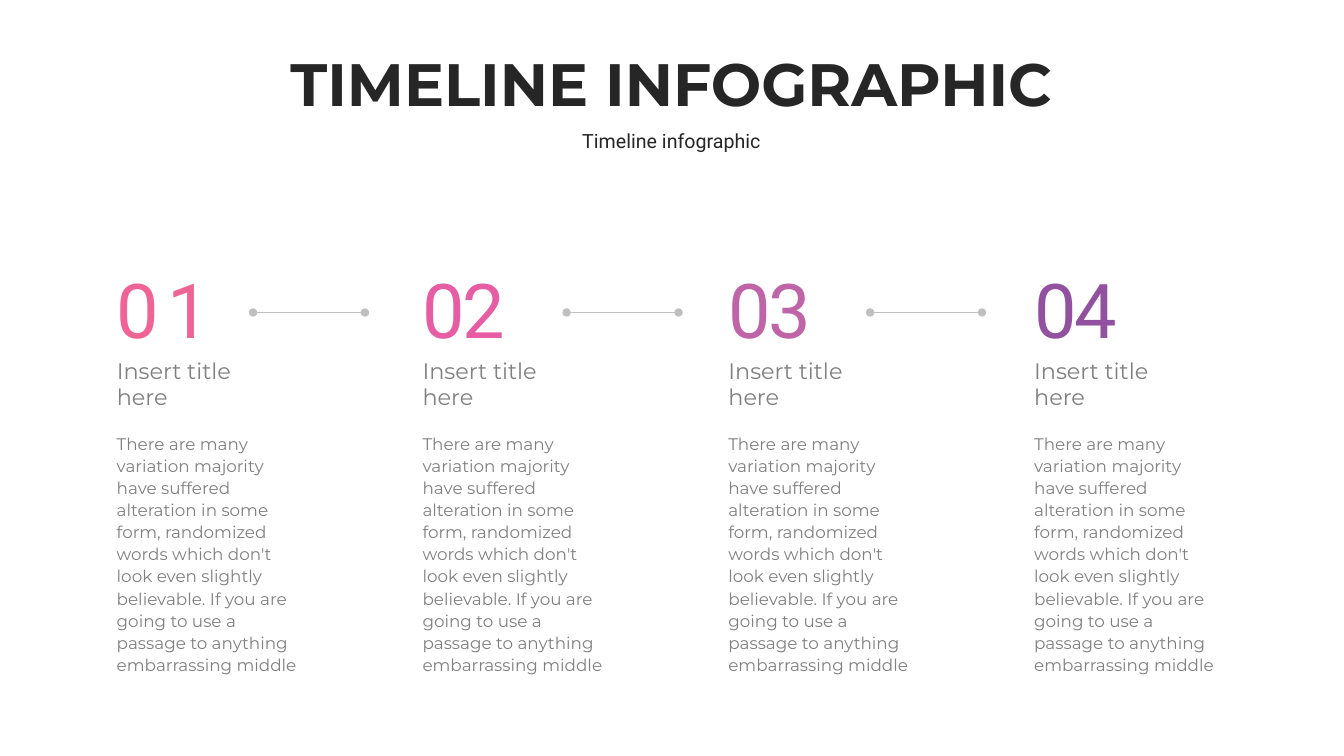
import pptx
import pptx.dml.color
import pptx.enum.shapes
import pptx.enum.text
import pptx.oxml.ns
import pptx.util
from lxml import etree

Inches = pptx.util.Inches
Pt = pptx.util.Pt
Align = pptx.enum.text.PP_ALIGN
AutoSize = pptx.enum.text.MSO_AUTO_SIZE

COLORS = {
    "heading": "262626",
    "text": "808080",
    "line": "BFBFBF",
    "01": "F06495",
    "02": "E65DA3",
    "03": "BF64A7",
    "04": "91519F",
}
BODY_TEXT = (
    "There are many variation majority have suffered alteration in some form, "
    "randomized words which don't look even slightly believable. If you are "
    "going to use a passage to anything embarrassing middle"
)
FIRST_LEFT = 1.06
COLUMN_STEP = 3.033
CONNECTOR_LEFTS = [2.51, 5.62, 8.63]
CONNECTOR_TOP = 3.1
CONNECTOR_LENGTH = 1.11


class TimelineSlide:
    """Holds the style and the slide, and draws each kind of element."""

    def __init__(self, presentation):
        self.slide = presentation.slides.add_slide(presentation.slide_layouts[2])
        self.heading_font = "Montserrat"
        self.number_font = "Roboto"

    def format_text(self, shape, text, font, size, color, bold=False,
                    align=Align.LEFT, line_spacing=1.0, space_before=0, tracking=0):
        shape.text_frame.text = text
        paragraph = shape.text_frame.paragraphs[0]
        paragraph.alignment = align
        paragraph.line_spacing = line_spacing
        paragraph.space_before = Pt(space_before)
        run = paragraph.runs[0]
        run.font.name = font
        run.font.size = Pt(size)
        run.font.bold = bold
        run.font.color.rgb = pptx.dml.color.RGBColor.from_string(COLORS[color])
        if tracking:
            run._r.get_or_add_rPr().set("spc", str(int(tracking * 100)))

    def placeholder(self, shape, text, top, height, font, size, **style):
        shape.left, shape.top = Inches(0.56), Inches(top)
        shape.width, shape.height = Inches(12.2), Inches(height)
        frame = shape.text_frame
        frame.auto_size = AutoSize.NONE
        frame.word_wrap = True
        frame.vertical_anchor = pptx.enum.text.MSO_ANCHOR.MIDDLE
        frame.margin_left = frame.margin_right = 0
        frame.margin_top = frame.margin_bottom = 0
        self.format_text(shape, text, font, size, "heading", align=Align.CENTER,
                         line_spacing=0.9, **style)

    def heading(self, title, subtitle):
        self.placeholder(self.slide.shapes.title, title, 0.5, 0.72,
                         self.heading_font, 42.7, bold=True)
        self.placeholder(self.slide.placeholders[1], subtitle, 1.29, 0.25,
                         self.number_font, 14, space_before=10)

    def text_box(self, left, top, width, height, wrap=True):
        shape = self.slide.shapes.add_textbox(
            Inches(left), Inches(top), Inches(width), Inches(height))
        shape.text_frame.word_wrap = wrap
        return shape

    def number(self, left, text, width, tracking):
        shape = self.text_box(left, 2.61, width, 0.91, wrap=False)
        shape.text_frame.auto_size = AutoSize.SHAPE_TO_FIT_TEXT
        shape.text_frame.margin_top = shape.text_frame.margin_bottom = 0
        self.format_text(shape, text, self.number_font, 54, text, tracking=tracking)

    def step_title(self, left, text):
        shape = self.text_box(left, 3.49, 1.72, 0.37)
        self.format_text(shape, text, self.heading_font, 16, "text")

    def step_body(self, left, text):
        shape = self.text_box(left, 4.23, 2.04, 2.09)
        self.format_text(shape, text, self.heading_font, 12, "text", line_spacing=1.1)

    def dotted_end_line(self, left):
        connector = self.slide.shapes.add_connector(
            pptx.enum.shapes.MSO_CONNECTOR.STRAIGHT,
            Inches(left), Inches(CONNECTOR_TOP),
            Inches(left + CONNECTOR_LENGTH), Inches(CONNECTOR_TOP))
        connector.line.width = Pt(1)
        connector.line.color.rgb = pptx.dml.color.RGBColor.from_string(COLORS["line"])
        line = connector.line._get_or_add_ln()
        for end in ("a:headEnd", "a:tailEnd"):
            etree.SubElement(line, pptx.oxml.ns.qn(end), type="oval")
        etree.SubElement(connector._element.spPr, pptx.oxml.ns.qn("a:effectLst"))


def main():
    presentation = pptx.Presentation()
    presentation.slide_width = Inches(13.33)
    presentation.slide_height = Inches(7.5)
    timeline = TimelineSlide(presentation)
    timeline.heading("TIMELINE INFOGRAPHIC", "Timeline infographic")
    for index, number in enumerate(["01", "02", "03", "04"]):
        left = FIRST_LEFT + index * COLUMN_STEP
        width, tracking = (1.25, 6) if index == 0 else (1.04, -1.5)
        timeline.number(left, number, width, tracking)
        timeline.step_title(left, "Insert title here")
        timeline.step_body(left, BODY_TEXT)
    for left in CONNECTOR_LEFTS:
        timeline.dotted_end_line(left)
    presentation.save("out.pptx")


if __name__ == "__main__":
    main()
